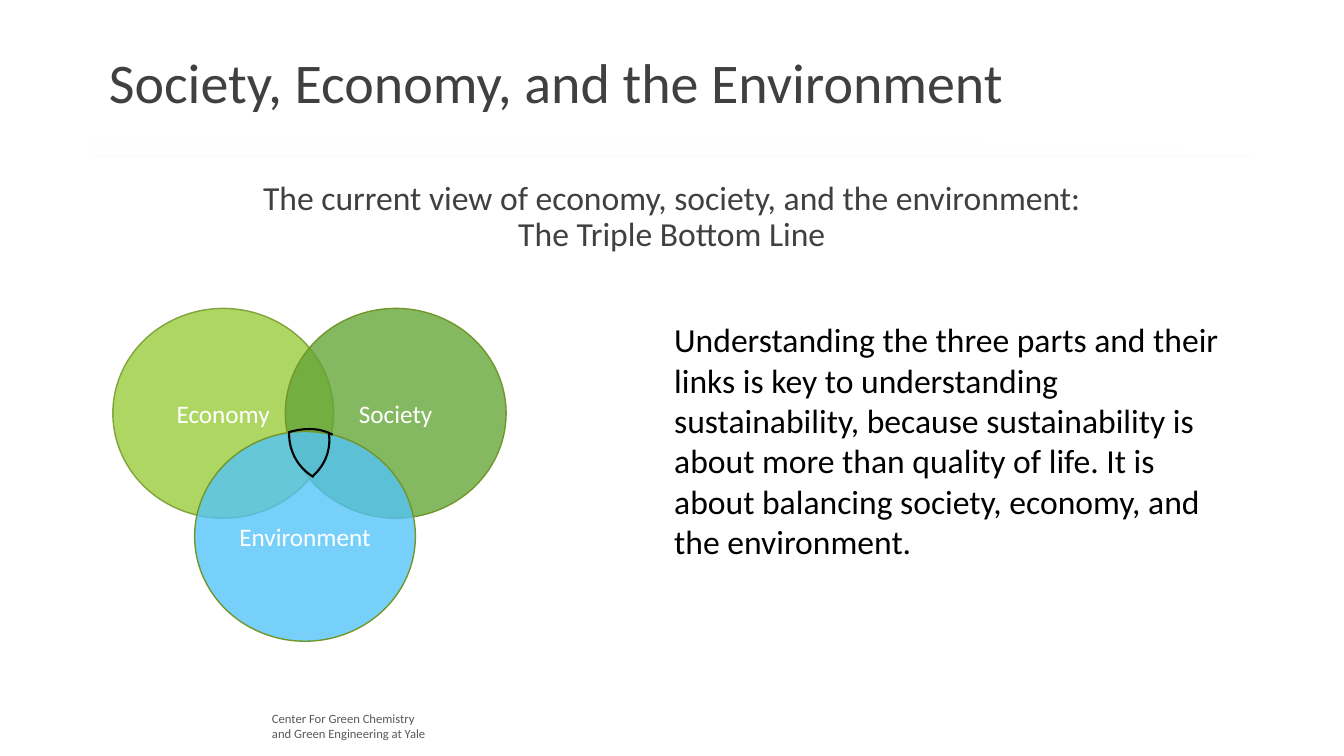
from lxml.etree import SubElement
from pptx import Presentation
from pptx.dml.color import RGBColor
from pptx.enum.shapes import MSO_CONNECTOR as CONNECTOR, MSO_SHAPE as SHAPE
from pptx.enum.text import MSO_ANCHOR as ANCHOR, PP_ALIGN as ALIGN
from pptx.oxml.ns import qn
from pptx.util import Pt

FONT = "Calibri"
BLACK = RGBColor(0x00, 0x00, 0x00)
WHITE = RGBColor(0xFF, 0xFF, 0xFF)
DARK = RGBColor(0x40, 0x40, 0x40)
GREY = RGBColor(0x59, 0x59, 0x59)
OLIVE = RGBColor(0x71, 0x96, 0x29)
LIME = RGBColor(0x99, 0xCB, 0x38)
GREEN = RGBColor(0x63, 0xA5, 0x37)
SKY = RGBColor(0x51, 0xC3, 0xF9)
CYAN = RGBColor(0x4E, 0xB3, 0xCF)
TEAL = RGBColor(0x44, 0xC1, 0xA3)
JADE = RGBColor(0x37, 0xA7, 0x6F)

TITLE = "Society, Economy, and the Environment"
SUBTITLE = ("The current view of economy, society, and the environment:\v"
            "The Triple Bottom Line")
MESSAGE = ("Understanding the three parts and their links is key to understanding "
           "sustainability, because sustainability is about more than quality of life. "
           "It is about balancing society, economy, and the environment.")
CENTER = "Center For Green Chemistry\nand Green Engineering at Yale"

RULES = [(66.2, 703.4, CYAN), (64.8, 843.1, TEAL), (65.5, 894.2, JADE)]
RULE_TOP, RULE_GAP, RULE_OPACITY = 101.5, 5.05, 3

CIRCLE_SIZE = (157.7, 149.8)
CIRCLES = [
    ("Economy", 80.6, 220.3, LIME, 79, 81),
    ("Society", 203.8, 220.3, GREEN, 79, 100),
    ("Environment", 139, 308.2, SKY, 78, 100),
]
CORE_ARCS = [
    ((206.6, 274.3, 70.6, 71.3), 22.5, 203.8),
    ((175, 308.2, 73.4, 49.7), 159.3, 203.8),
    ((166.3, 280.1, 67, 71.3), 253.4, 199.62),
]
ARC_START = 166.56


def set_opacity(fill_parent, percent):
    color = fill_parent.find(".//" + qn("a:srgbClr"))
    SubElement(color, qn("a:alpha")).set("val", str(percent * 1000))


def style_text(frame, size, color, align):
    for paragraph in frame.paragraphs:
        paragraph.alignment = align
        for run in paragraph.runs:
            run.font.name = FONT
            run.font.size = Pt(size)
            run.font.color.rgb = color


def add_text(slide, text, box, size, color, align=ALIGN.LEFT, wrap=True):
    frame = slide.shapes.add_textbox(*map(Pt, box)).text_frame
    frame.word_wrap = wrap
    frame.text = text
    style_text(frame, size, color, align)
    return frame


def add_rules(slide):
    for row, (start, end, color) in enumerate(RULES):
        y = Pt(RULE_TOP + row * RULE_GAP)
        rule = slide.shapes.add_connector(CONNECTOR.STRAIGHT, Pt(start), y, Pt(end), y)
        rule.line.color.rgb = color
        rule.line.width = Pt(0.5)
        properties = rule.element.spPr
        set_opacity(properties, RULE_OPACITY)
        SubElement(properties, qn("a:effectLst"))


def add_circles(slide):
    for name, left, top, color, opacity, edge_opacity in CIRCLES:
        circle = slide.shapes.add_shape(
            SHAPE.OVAL, *map(Pt, (left, top, *CIRCLE_SIZE)))
        circle.shadow.inherit = False
        circle.fill.solid()
        circle.fill.fore_color.rgb = color
        circle.line.color.rgb = OLIVE
        circle.line.width = Pt(1)
        properties = circle.element.spPr
        set_opacity(properties.find(qn("a:solidFill")), opacity)
        set_opacity(properties.find(qn("a:ln")), edge_opacity)
        circle.text_frame.text = name
        circle.text_frame.vertical_anchor = ANCHOR.MIDDLE
        style_text(circle.text_frame, 18, WHITE, ALIGN.CENTER)


def add_core(slide):
    for box, rotation, arc_end in CORE_ARCS:
        arc = slide.shapes.add_shape(SHAPE.ARC, *map(Pt, box))
        arc.shadow.inherit = False
        arc.adjustments[0] = ARC_START
        arc.adjustments[1] = arc_end
        arc.rotation = rotation
        for flip in ("flipH", "flipV"):
            arc.element.spPr.xfrm.set(flip, "1")
        arc.fill.background()
        arc.line.color.rgb = BLACK
        arc.line.width = Pt(1.5)


def main():
    deck = Presentation()
    deck.slide_width, deck.slide_height = Pt(960), Pt(540)
    slide = deck.slides.add_slide(deck.slide_layouts[6])
    add_text(slide, CENTER, (187.2, 504, 133.9, 28.8), 9, GREY)
    add_rules(slide)
    subtitle = add_text(slide, SUBTITLE, (80.6, 125.3, 798.5, 59.8), 24, DARK, ALIGN.CENTER)
    subtitle.vertical_anchor = ANCHOR.MIDDLE
    subtitle.paragraphs[0].line_spacing = 0.9
    add_circles(slide)
    add_text(slide, MESSAGE, (474.5, 224.6, 404.6, 181.4), 24, BLACK)
    add_core(slide)
    add_text(slide, TITLE, (59, 30.2, 676.1, 55.4), 40, DARK, ALIGN.CENTER, wrap=False)
    deck.save("out.pptx")


if __name__ == "__main__":
    main()
